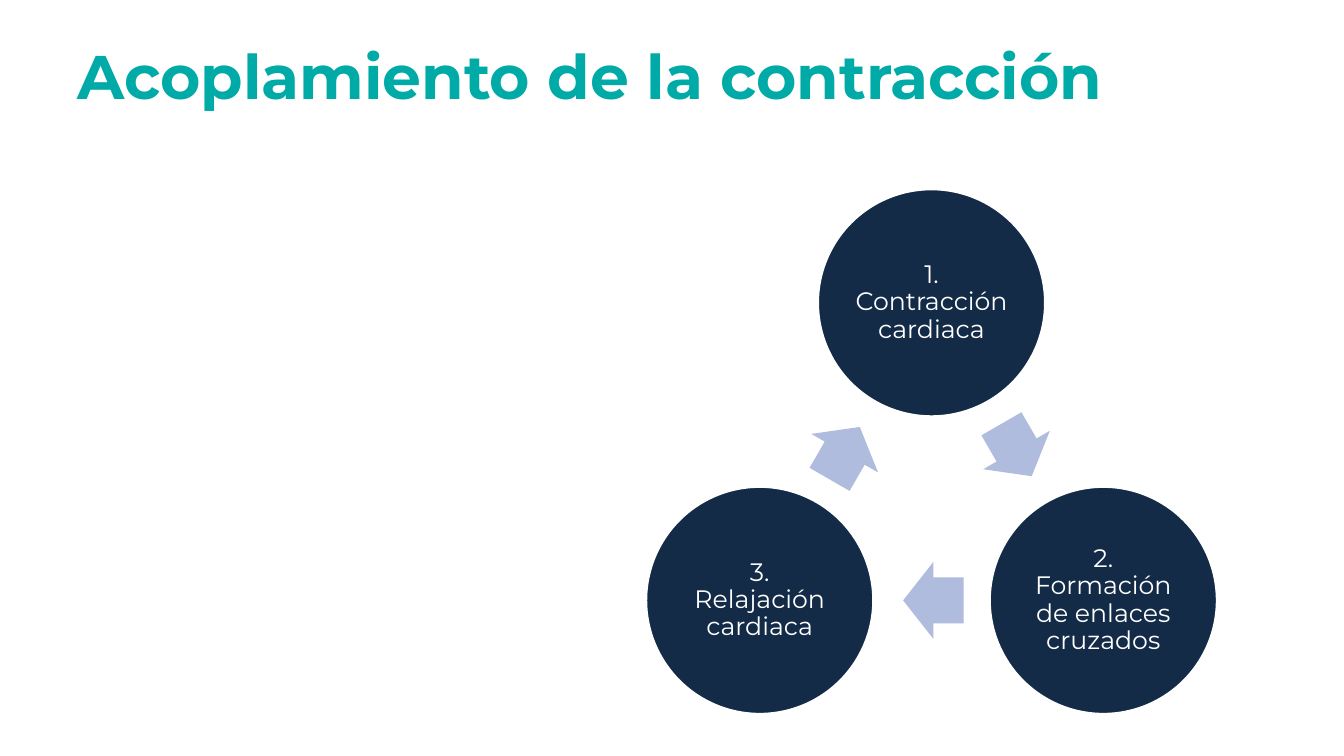
from math import cos, radians, sin

from pptx import Presentation
from pptx.dml.color import RGBColor
from pptx.enum import shapes, text
from pptx.util import Pt

TEAL = RGBColor(0x00, 0xAA, 0xA7)
NAVY = RGBColor(0x14, 0x2B, 0x48)
LAVENDER = RGBColor(0xB0, 0xBC, 0xDE)
WHITE = RGBColor(0xFF, 0xFF, 0xFF)

STEPS = ["1. Contracción cardiaca", "2. Formación de enlaces cruzados", "3. Relajación cardiaca"]
CENTER_X, CENTER_Y, RADIUS = 665.4, 358, 141.7
CIRCLE = 162.7
ARROW_WIDTH, ARROW_HEIGHT, ARROW_SETBACK = 43.2, 55, 1.3


def add_centered(kind, x, y, width, height, color):
    shape = slide.shapes.add_shape(
        kind, Pt(x - width / 2), Pt(y - height / 2), Pt(width), Pt(height))
    shape.shadow.inherit = False
    shape.fill.solid()
    shape.fill.fore_color.rgb = color
    return shape


def write(frame, wording, size, color, bold):
    frame.text = wording
    frame.word_wrap = True
    frame.vertical_anchor = text.MSO_ANCHOR.MIDDLE
    paragraph = frame.paragraphs[0]
    paragraph.line_spacing = 0.9
    font = paragraph.runs[0].font
    font.name = "Montserrat"
    font.size = Pt(size)
    font.bold = bold
    font.color.rgb = color
    return paragraph


presentation = Presentation()
presentation.slide_width = Pt(960)
presentation.slide_height = Pt(540)
slide = presentation.slides.add_slide(presentation.slide_layouts[6])

title = slide.shapes.add_textbox(Pt(48.2), Pt(4.3), Pt(828), Pt(104.4))
write(title.text_frame, "Acoplamiento de la contracción", 44, TEAL, True)

for index, step in enumerate(STEPS):
    angle = radians(120 * index - 90)
    circle = add_centered(
        shapes.MSO_SHAPE.OVAL, CENTER_X + RADIUS * cos(angle),
        CENTER_Y + RADIUS * sin(angle), CIRCLE, CIRCLE, NAVY)
    circle.line.color.rgb = WHITE
    circle.line.width = Pt(2)
    frame = circle.text_frame
    frame.margin_left = frame.margin_right = Pt(2.3)
    frame.margin_top = frame.margin_bottom = Pt(2.3)
    write(frame, step, 18, WHITE, False).alignment = text.PP_ALIGN.CENTER

    heading = 60 + 120 * index
    outward = radians(heading - 90)
    forward = radians(heading)
    arrow = add_centered(
        shapes.MSO_SHAPE.RIGHT_ARROW,
        CENTER_X + RADIUS / 2 * cos(outward) - ARROW_SETBACK * cos(forward),
        CENTER_Y + RADIUS / 2 * sin(outward) - ARROW_SETBACK * sin(forward),
        ARROW_WIDTH, ARROW_HEIGHT, LAVENDER)
    arrow.line.fill.background()
    arrow.adjustments[0] = 0.6
    arrow.adjustments[1] = 0.5
    arrow.rotation = heading

presentation.save("out.pptx")
